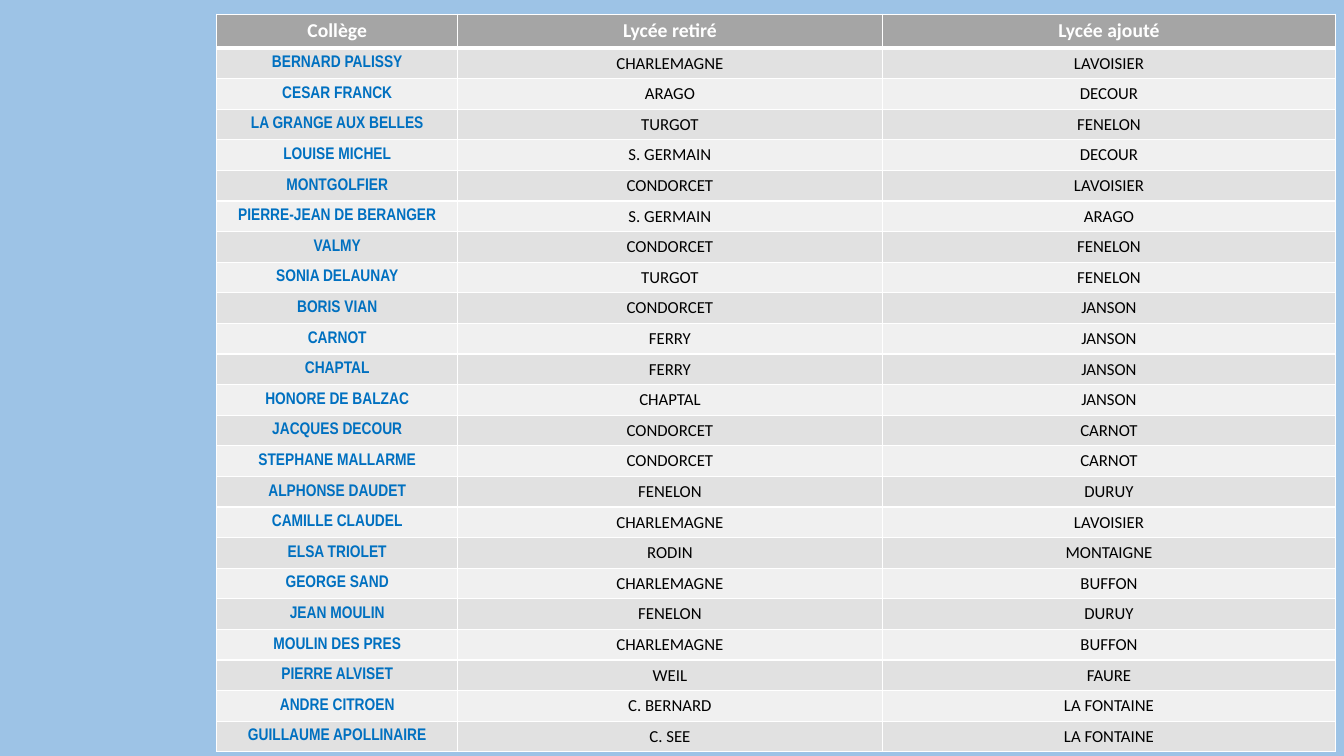
from pptx import Presentation, util as u
from pptx.dml.color import RGBColor
from pptx.enum import text
from pptx.oxml import parse_xml
from pptx.oxml.ns import nsdecls

COLORS = {
    "background": "9DC3E6", "header": "A5A5A5", "odd": "E1E1E1", "even": "F0F0F0",
    "border": "FFFFFF", "header_text": "FFFFFF", "college": "0070C0", "lycee": "000000",
}
FORMATS = {
    "header_text": {"name": "Calibri", "size": u.Pt(14), "bold": True},
    "college": {"name": "Arial Narrow", "size": u.Pt(12), "bold": True},
    "lycee": {"name": "Calibri", "size": u.Pt(12), "bold": False},
}
NO_MARGINS = dict.fromkeys(
    ("margin_left", "margin_right", "margin_top", "margin_bottom"), 0)

HEADER = ("Collège", "Lycée retiré", "Lycée ajouté")
CHANGES = [
    ("BERNARD PALISSY", "CHARLEMAGNE", "LAVOISIER"),
    ("CESAR FRANCK", "ARAGO", "DECOUR"),
    ("LA GRANGE AUX BELLES", "TURGOT", "FENELON"),
    ("LOUISE MICHEL", "S. GERMAIN", "DECOUR"),
    ("MONTGOLFIER", "CONDORCET", "LAVOISIER"),
    ("PIERRE-JEAN DE BERANGER", "S. GERMAIN", "ARAGO"),
    ("VALMY", "CONDORCET", "FENELON"),
    ("SONIA DELAUNAY", "TURGOT", "FENELON"),
    ("BORIS VIAN", "CONDORCET", "JANSON"),
    ("CARNOT", "FERRY", "JANSON"),
    ("CHAPTAL", "FERRY", "JANSON"),
    ("HONORE DE BALZAC", "CHAPTAL", "JANSON"),
    ("JACQUES DECOUR", "CONDORCET", "CARNOT"),
    ("STEPHANE MALLARME", "CONDORCET", "CARNOT"),
    ("ALPHONSE DAUDET", "FENELON", "DURUY"),
    ("CAMILLE CLAUDEL", "CHARLEMAGNE", "LAVOISIER"),
    ("ELSA TRIOLET", "RODIN", "MONTAIGNE"),
    ("GEORGE SAND", "CHARLEMAGNE", "BUFFON"),
    ("JEAN MOULIN", "FENELON", "DURUY"),
    ("MOULIN DES PRES", "CHARLEMAGNE", "BUFFON"),
    ("PIERRE ALVISET", "WEIL", "FAURE"),
    ("ANDRE CITROEN", "C. BERNARD", "LA FONTAINE"),
    ("GUILLAUME APOLLINAIRE", "C. SEE", "LA FONTAINE"),
]


class Deck:
    """Slide builder whose lengths are hundredths of the slide's size."""

    def __init__(self, width, height):
        self.prs = Presentation()
        self.prs.slide_width, self.prs.slide_height = u.Inches(width), u.Inches(height)
        self.s = self.prs.slides.add_slide(self.prs.slide_layouts[6])

    def x(self, share):
        return round(self.prs.slide_width * share / 100)

    def y(self, share):
        return round(self.prs.slide_height * share / 100)

    def background(self, color):
        self.fill(self.s.background.fill, color)

    def fill(self, fill, color):
        fill.solid()
        fill.fore_color.rgb = RGBColor.from_string(COLORS[color])

    def borders(self, cell, **widths):
        """Draw the cell's L, R, T and B borders, with widths in points."""
        tc_pr = cell._tc.get_or_add_tcPr()
        for i, (side, width) in enumerate(widths.items()):
            tc_pr.insert(i, parse_xml(
                f'<a:ln{side} {nsdecls("a")} w="{u.Pt(width)}"><a:solidFill>'
                f'<a:srgbClr val="{COLORS["border"]}"/></a:solidFill></a:ln{side}>'))

    def cell(self, cell, words, style, fill, margins):
        for name, value in margins.items():
            setattr(cell, name, value)
        cell.vertical_anchor = text.MSO_ANCHOR.MIDDLE
        self.fill(cell.fill, fill)
        p = cell.text_frame.paragraphs[0]
        p.alignment = text.PP_ALIGN.CENTER
        r = p.add_run()
        r.text = words
        for name, value in FORMATS[style].items():
            setattr(r.font, name, value)
        r.font.color.rgb = RGBColor.from_string(COLORS[style])

    def table(self, left, top, height, columns, header_height, row_height, rows):
        frame = self.s.shapes.add_table(
            len(rows), len(columns), self.x(left), self.y(top),
            self.x(sum(columns)), self.y(height))
        table = frame.table
        table.horz_banding = False
        for column, width in zip(table.columns, columns):
            column.width = self.x(width)
        for i, row in enumerate(rows):
            table.rows[i].height = self.y(row_height if i else header_height)
            fill = ("even", "odd")[i % 2] if i else "header"
            for j, words in enumerate(row):
                style = "header_text" if i == 0 else "lycee" if j else "college"
                cell = table.cell(i, j)
                self.cell(cell, words, style, fill, NO_MARGINS if style == "college" else {})
                self.borders(cell, L=1, R=1, T=3 if i == 1 else 1, B=1 if i else 3)
        frame.height = self.y(height)


def main():
    deck = Deck(13.33, 7.5)
    deck.background("background")
    deck.table(left=16.13, top=1.87, height=96.4, columns=(17.93, 31.58, 33.76),
               header_height=4.27, row_height=3.33, rows=[HEADER, *CHANGES])
    deck.prs.save("out.pptx")


if __name__ == "__main__":
    main()
